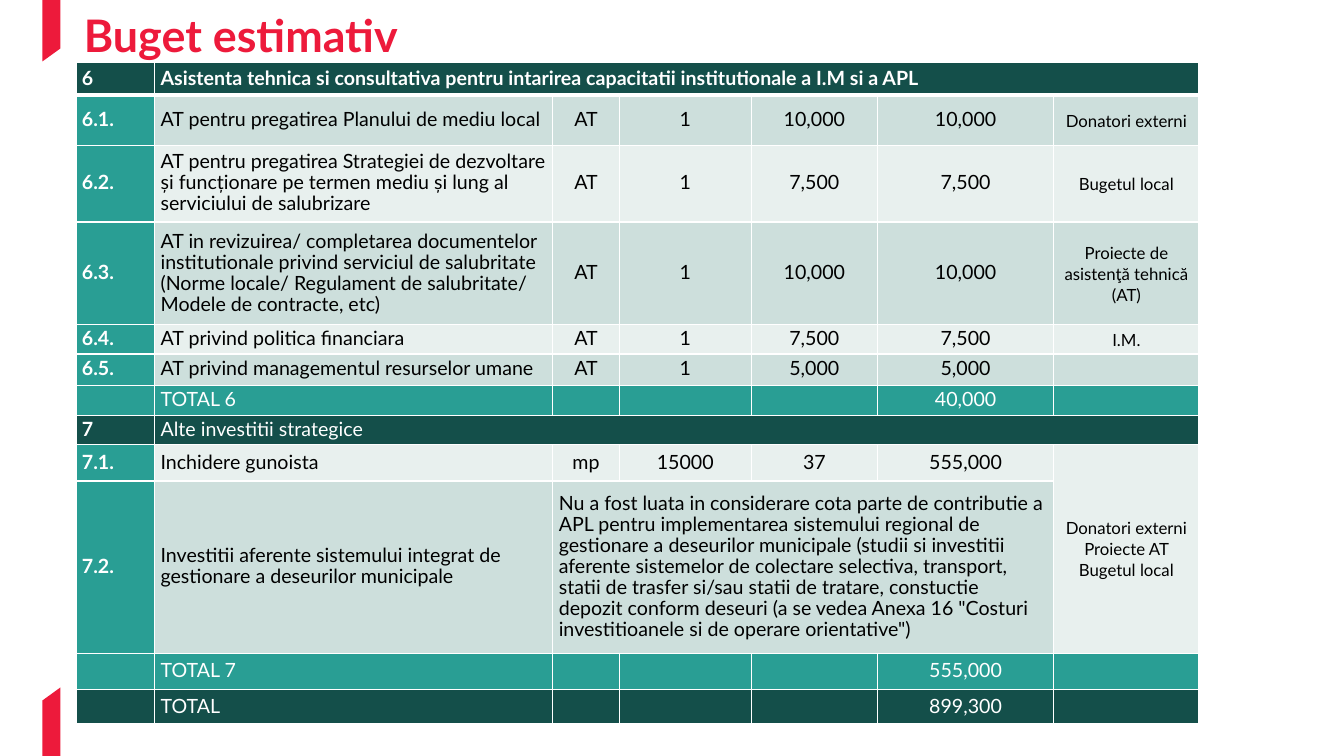
from dataclasses import dataclass
from lxml.etree import SubElement
from pptx import Presentation
from pptx.dml.color import RGBColor
from pptx.enum.text import MSO_ANCHOR, PP_ALIGN
from pptx.oxml.ns import qn
from pptx.slide import Slide
from pptx.table import Table, _Cell
from pptx.text.text import _Paragraph
from pptx.util import Inches, Pt

FONT = "Lato"
RED, DARK, TEAL, WHITE, BLACK = "ED1A3B", "144F4A", "299E94", "FFFFFF", "000000"
BANDS = ("CDDFDC", "E8F0EE")
SLIDE_WIDTH, SLIDE_HEIGHT = Inches(13.333), Inches(7.5)
COLUMN_SHARES = (5.85, 29.63, 4.95, 9.83, 9.38, 13.13, 10.8)
SOURCE_COLUMN = len(COLUMN_SHARES) - 1


@dataclass(frozen=True)
class BudgetRow:
    """One table row: its height in percent of the slide, its fills and its texts."""
    height: float
    label_fill: str
    fill: str
    texts: tuple[str, ...]
    label_bold: bool = True
    bold: bool = False
    span: int = 1


@dataclass(frozen=True)
class Ribbon:
    """A slanted edge mark, as points in percent of the slide."""
    points: tuple[tuple[float, float], ...]


def heading(height: float, number: str, title: str, bold: bool = False) -> BudgetRow:
    """Describe a dark heading whose title spans the table."""
    return BudgetRow(height, DARK, DARK, (number, title), bold=bold, span=6)


def item(height: float, band: int, *texts: str) -> BudgetRow:
    """Describe a budget item on a light band."""
    return BudgetRow(height, TEAL, BANDS[band], texts)


def total(height: float, fill: str, title: str, amount: str) -> BudgetRow:
    """Describe a total row."""
    return BudgetRow(height, fill, fill, ("", title, "", "", "", amount))


NOTE = (
    "Nu a fost luata in considerare cota parte de contributie a APL pentru implementarea "
    "sistemului regional de gestionare a deseurilor municipale (studii si investitii aferente "
    "sistemelor de colectare selectiva, transport, statii de trasfer si/sau statii de tratare, "
    'constuctie depozit conform deseuri (a se vedea Anexa 16 "Costuri investitioanele si de '
    'operare orientative")'
)
ROWS = (
    heading(4.27, "6", "Asistenta tehnica si consultativa pentru intarirea capacitatii "
            "institutionale a I.M si a APL", bold=True),
    item(6.67, 0, "6.1.", "AT pentru pregatirea Planului de mediu local",
         "AT", "1", "10,000", "10,000", "Donatori externi"),
    item(10.13, 1, "6.2.", "AT pentru pregatirea Strategiei de dezvoltare și funcționare pe "
         "termen mediu și lung al serviciului de salubrizare",
         "AT", "1", "7,500", "7,500", "Bugetul local"),
    item(13.6, 0, "6.3.", "AT in revizuirea/ completarea documentelor institutionale privind "
         "serviciul de salubritate (Norme locale/ Regulament de salubritate/ Modele de "
         "contracte, etc)", "AT", "1", "10,000", "10,000", "Proiecte de asistenţă tehnică (AT)"),
    item(3.87, 1, "6.4.", "AT privind politica financiara", "AT", "1", "7,500", "7,500", "I.M."),
    item(4.13, 0, "6.5.", "AT privind managementul resurselor umane", "AT", "1", "5,000", "5,000"),
    total(3.2, TEAL, "TOTAL 6", "40,000"),
    heading(3.87, "7", "Alte investitii strategice"),
    item(4.8, 1, "7.1.", "Inchidere gunoista", "mp", "15000", "37", "555,000",
         "Donatori externi\vProiecte AT Bugetul local"),
    item(22.8, 0, "7.2.", "Investitii aferente sistemului integrat de gestionare a deseurilor "
         "municipale", NOTE),
    total(4.8, TEAL, "TOTAL 7", "555,000"),
    total(4.53, DARK, "TOTAL", "899,300"),
)
STRATEGIC_ROW = 8
RIBBONS = (
    Ribbon(((3.15, 0), (4.5, 0), (4.5, 6.4), (3.15, 8.13))),
    Ribbon(((3.15, 100), (4.5, 100), (4.5, 90.93), (3.15, 92.67))),
)


def color(value: str) -> RGBColor:
    """Turn a hex string into a colour."""
    return RGBColor.from_string(value)


def across(percent: float) -> int:
    """Return a share of the slide's width."""
    return round(SLIDE_WIDTH * percent / 100)


def down(percent: float) -> int:
    """Return a share of the slide's height."""
    return round(SLIDE_HEIGHT * percent / 100)


def format_runs(paragraph: _Paragraph, size: float, hex_color: str, bold: bool) -> None:
    """Apply one look to every run of a paragraph."""
    for run in paragraph.runs:
        run.font.name, run.font.size, run.font.bold = FONT, Pt(size), bold
        run.font.color.rgb = color(hex_color)


def draw_ribbon(slide: Slide, ribbon: Ribbon) -> None:
    """Draw one slanted edge mark."""
    start, *others = [(across(x), down(y)) for x, y in ribbon.points]
    builder = slide.shapes.build_freeform(*start)
    builder.add_line_segments(others, close=True)
    shape = builder.convert_to_shape()
    shape.shadow.inherit = False
    shape.fill.solid()
    shape.fill.fore_color.rgb = color(RED)
    shape.line.fill.background()


def draw_title(slide: Slide) -> None:
    """Write the slide title."""
    box = slide.shapes.add_textbox(across(5.5), down(-0.4), across(94.5), down(9.73))
    frame = box.text_frame
    frame.word_wrap = True
    frame.vertical_anchor = MSO_ANCHOR.MIDDLE
    frame.text = "Buget estimativ"
    frame.paragraphs[0].line_spacing = 1.05
    format_runs(frame.paragraphs[0], 32, RED, True)


def add_borders(cell: _Cell, top: float, bottom: float) -> None:
    """Give a cell white borders."""
    properties = cell._tc.get_or_add_tcPr()
    for side, width in (("L", 1), ("R", 1), ("T", top), ("B", bottom)):
        line = SubElement(properties, qn(f"a:ln{side}"), w=str(Pt(width)))
        SubElement(SubElement(line, qn("a:solidFill")), qn("a:srgbClr"), val=WHITE)


def fill_cell(cell: _Cell, row: BudgetRow, row_index: int, column: int) -> None:
    """Write and style one table cell."""
    text = row.texts[column] if column < len(row.texts) else ""
    is_label = column == 0
    add_borders(cell, 3 if row_index == 1 else 1, 3 if row_index == 0 else 1)
    cell.fill.solid()
    cell.fill.fore_color.rgb = color(row.label_fill if is_label else row.fill)
    cell.vertical_anchor = MSO_ANCHOR.MIDDLE
    cell.margin_left = cell.margin_right = Inches(0.06)
    cell.margin_top = cell.margin_bottom = 0
    cell.text_frame.text = text
    paragraph = cell.text_frame.paragraphs[0]
    paragraph.line_spacing = Pt(15)
    if column > 1 and text != NOTE:
        paragraph.alignment = PP_ALIGN.CENTER
    format_runs(
        paragraph,
        12 if column == SOURCE_COLUMN else 14,
        BLACK if row.fill in BANDS and not is_label else WHITE,
        row.label_bold if is_label else row.bold,
    )


def merge_cells(table: Table) -> None:
    """Join the headings, the shared funding source and the note."""
    for index, row in enumerate(ROWS):
        if row.span > 1:
            table.cell(index, 1).merge(table.cell(index, row.span))
    note_row = STRATEGIC_ROW + 1
    table.cell(STRATEGIC_ROW, SOURCE_COLUMN).merge(table.cell(note_row, SOURCE_COLUMN))
    table.cell(note_row, 2).merge(table.cell(note_row, SOURCE_COLUMN - 1))


def draw_budget(slide: Slide) -> None:
    """Draw the budget table."""
    frame = slide.shapes.add_table(
        len(ROWS), len(COLUMN_SHARES), across(5.65), down(8.3),
        across(sum(COLUMN_SHARES)), down(sum(row.height for row in ROWS)),
    )
    table = frame.table
    table.first_row = table.horz_banding = False
    for column, share in zip(table.columns, COLUMN_SHARES):
        column.width = across(share)
    for index, row in enumerate(ROWS):
        table.rows[index].height = down(row.height)
        for column in range(len(COLUMN_SHARES)):
            fill_cell(table.cell(index, column), row, index, column)
    merge_cells(table)


def main() -> None:
    """Build and save the slide."""
    presentation = Presentation()
    presentation.slide_width, presentation.slide_height = SLIDE_WIDTH, SLIDE_HEIGHT
    slide = presentation.slides.add_slide(presentation.slide_layouts[6])
    for ribbon in RIBBONS:
        draw_ribbon(slide, ribbon)
    draw_title(slide)
    draw_budget(slide)
    presentation.save("out.pptx")


if __name__ == "__main__":
    main()
